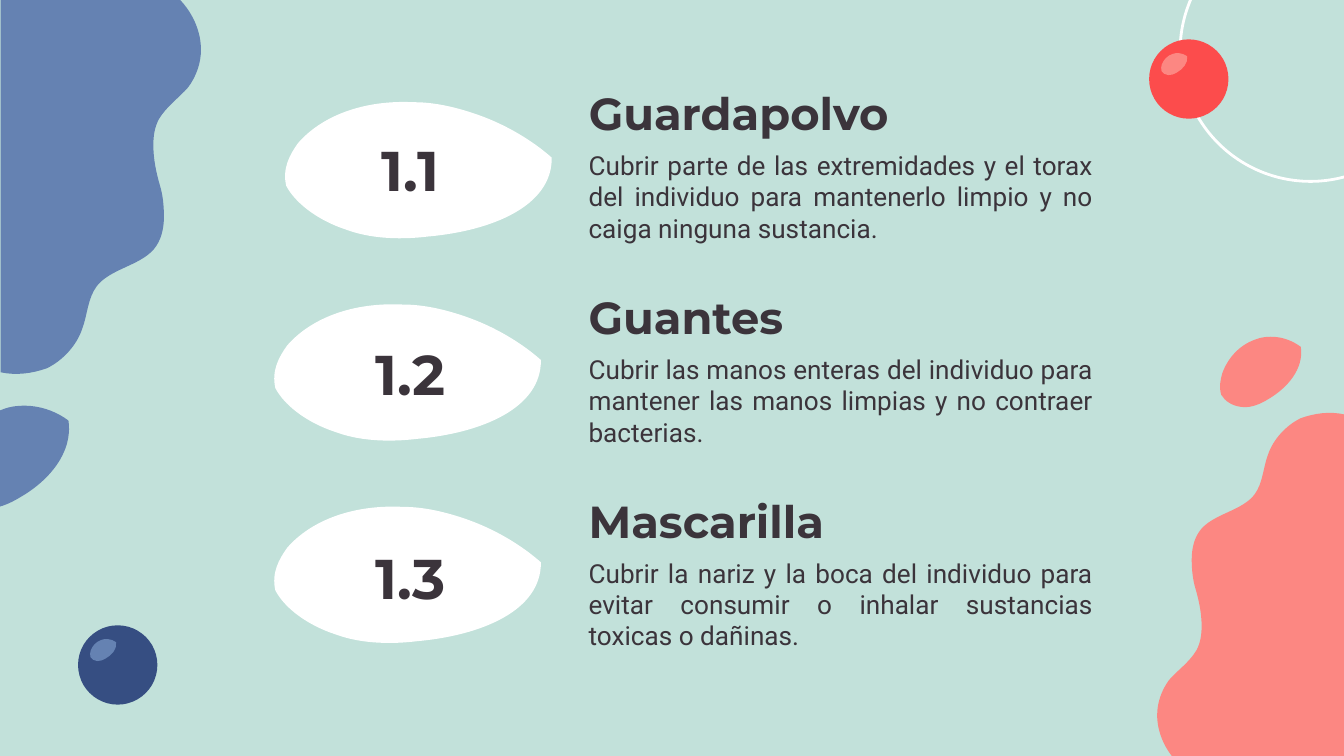
from pptx import Presentation
from pptx.dml.color import RGBColor
from pptx.enum import shapes, text
from pptx.oxml import ns, xmlchemy
from pptx.util import Pt

MINT = RGBColor(0xC2, 0xE1, 0xDA)
BLUE = RGBColor(0x65, 0x82, 0xB2)
NAVY = RGBColor(0x36, 0x4E, 0x82)
SALMON = RGBColor(0xFC, 0x87, 0x82)
RED = RGBColor(0xFC, 0x4C, 0x4C)
WHITE = RGBColor(0xFF, 0xFF, 0xFF)
INK = RGBColor(0x3B, 0x34, 0x3B)

LEAF = [
    (622, 0), (544, 0), (457, 15), (384, 61), (203, 154), (75, 346), (25, 567),
    (10, 657), (0, 759), (36, 858), (87, 942), (179, 996), (279, 1000),
    (290, 1000), (301, 1000), (311, 1000), (411, 1000), (516, 937), (599, 865),
    (818, 690), (1000, 405), (938, 106), (845, 39), (732, 0), (622, 0),
]
BLOB = [
    (218, 0), (176, 0), (134, 37), (102, 97), (44, 198), (15, 366), (8, 527),
    (0, 688), (63, 849), (79, 1000), (79, 1000), (992, 1000), (992, 1000),
    (1000, 923), (995, 842), (982, 768), (963, 688), (927, 621), (889, 594),
    (856, 567), (815, 567), (785, 520), (744, 453), (737, 312), (698, 238),
    (676, 198), (647, 185), (618, 185), (592, 185), (566, 191), (544, 205),
    (511, 225), (479, 238), (447, 238), (424, 238), (405, 232), (385, 211),
    (353, 171), (334, 111), (308, 64), (282, 24), (250, 0), (218, 0),
]

ITEMS = [
    ("1.1", "Guardapolvo", 154.1,
     "Cubrir parte de las extremidades y el torax del individuo para "
     "mantenerlo limpio y no caiga ninguna sustancia."),
    ("1.2", "Guantes", 148.3,
     "Cubrir las manos enteras del individuo para mantener las manos limpias "
     "y no contraer bacterias."),
    ("1.3", "Mascarilla", 148.3,
     "Cubrir la nariz y la boca del individuo para evitar consumir o inhalar "
     "sustancias toxicas o dañinas."),
]


def place(shape, left, top, width, height):
    """Move and size a shape, in points."""
    shape.left, shape.top = Pt(left), Pt(top)
    shape.width, shape.height = Pt(width), Pt(height)


def paint(shape, color):
    """Give a shape a plain fill without line or shadow."""
    shape.shadow.inherit = False
    shape.fill.solid()
    shape.fill.fore_color.rgb = color
    shape.line.fill.background()


def add_curve(page, outline, bounds, angle, color):
    """Draw a closed outline of cubic curves, stretched to its bounds."""
    builder = page.shapes.build_freeform(*outline[0])
    builder.add_line_segments(outline[1:], close=True)
    shape = builder.convert_to_shape()
    lines = list(shape._element.iter(ns.qn("a:lnTo")))
    for first in range(0, len(lines), 3):
        curve = xmlchemy.OxmlElement("a:cubicBezTo")
        lines[first].addprevious(curve)
        for line in lines[first:first + 3]:
            curve.append(line[0])
            line.getparent().remove(line)
    place(shape, *bounds)
    shape.rotation = angle
    paint(shape, color)
    return shape


def add_circle(page, left, top, size, color):
    """Draw a filled circle."""
    circle = page.shapes.add_shape(
        shapes.MSO_SHAPE.OVAL, Pt(left), Pt(top), Pt(size), Pt(size))
    paint(circle, color)
    return circle


def add_ring(page, left, top, size):
    """Draw a thin white circle without fill."""
    ring = add_circle(page, left, top, size, WHITE)
    ring.fill.background()
    ring.line.color.rgb = WHITE
    ring.line.width = Pt(1.5)


def add_bubble(page, left, top, color, glint_color):
    """Draw a ball with a glint as one group."""
    ball = add_circle(page, left, top, 42.5, color)
    glint = add_curve(page, LEAF, (left + 6.5, top + 7.2, 14.4, 12.2), 5, glint_color)
    page.shapes.add_group_shape([ball, glint])


def write(box, bounds, words, font, size, align, anchor, bold=True):
    """Place a box and set its text in one style."""
    place(box, *bounds)
    frame = box.text_frame
    frame.text = words
    frame.word_wrap = True
    frame.auto_size = text.MSO_AUTO_SIZE.NONE
    frame.vertical_anchor = anchor
    frame.margin_left = frame.margin_right = Pt(7.2)
    frame.margin_top = frame.margin_bottom = Pt(7.2)
    para = frame.paragraphs[0]
    para.alignment = align
    span = para.runs[0].font
    span.name, span.size, span.bold = font, Pt(size), bold
    span.color.rgb = INK


def add_box(page):
    """Add an empty text box to be placed later."""
    return page.shapes.add_textbox(0, 0, 0, 0)


def add_item(page, row, number, heading, leaf_left, body):
    """Draw one numbered leaf with its heading and description."""
    align, anchor = text.PP_ALIGN, text.MSO_ANCHOR
    shift = 109.2 * row
    add_curve(page, LEAF, (leaf_left, 53.3 + 108.4 * row, 143.3, 81.4), 19.3, WHITE)
    write(add_box(page), (164.9, 67 + shift, 110.2, 47.5), number,
          "Montserrat", 30, align.CENTER, anchor.MIDDLE)
    title = add_box(page) if row else page.shapes.title
    write(title, (308.2, 38.1 + shift, 284.4, 43.9), heading,
          "Montserrat", 24, align.LEFT, anchor.BOTTOM)
    write(add_box(page), (308.2, 72.8 + shift, 284.4, 65.5), body,
          "Roboto", 14, align.JUSTIFY, anchor.TOP, bold=False)


def main():
    """Build the slide and save it."""
    deck = Presentation()
    deck.slide_width, deck.slide_height = Pt(720), Pt(405)
    page = deck.slides.add_slide(deck.slide_layouts[5])
    page.background.fill.solid()
    page.background.fill.fore_color.rgb = MINT
    add_curve(page, BLOB, (565.9, 274.3, 208.1, 100.1), 270, SALMON)
    add_curve(page, BLOB, (-57.6, 36, 223.2, 107.3), 90, BLUE)
    add_curve(page, LEAF, (-26.6, 216.7, 65.5, 56.9), 5, BLUE)
    add_curve(page, LEAF, (653.8, 180, 44.6, 38.9), 5, SALMON)
    add_ring(page, 632.2, -42.5, 139.7)
    add_bubble(page, 615.6, 21.1, RED, SALMON)
    add_bubble(page, 41.8, 335, NAVY, BLUE)
    for row, item in enumerate(ITEMS):
        add_item(page, row, *item)
    deck.save("out.pptx")


if __name__ == "__main__":
    main()
